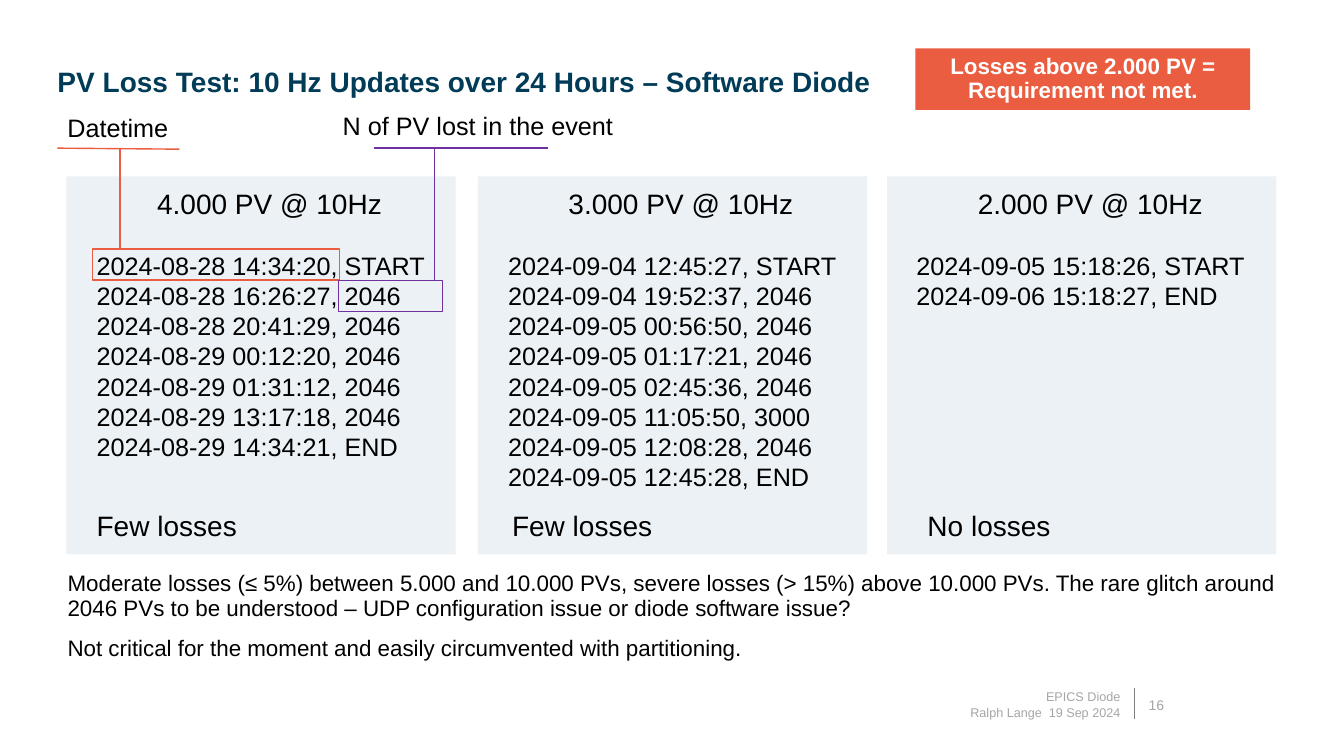
from lxml.etree import SubElement
from pptx import Presentation
from pptx.dml.color import RGBColor
from pptx.enum.shapes import MSO_CONNECTOR as Connector, MSO_SHAPE as Preset
from pptx.enum.text import MSO_ANCHOR as Anchor, MSO_AUTO_SIZE as AutoSize, PP_ALIGN as Align
from pptx.oxml.ns import qn
from pptx.util import Inches, Pt


class Theme:
    font = "Arial"
    navy = RGBColor(0x00, 0x3C, 0x58)
    panel = RGBColor(0xD9, 0xE5, 0xEC)
    orange = RGBColor(0xEB, 0x5D, 0x40)
    purple = RGBColor(0x70, 0x30, 0xA0)
    black = RGBColor(0x00, 0x00, 0x00)
    white = RGBColor(0xFF, 0xFF, 0xFF)
    footer = RGBColor(0xA6, 0xA6, 0xA6)
    divider = RGBColor(0x80, 0x80, 0x80)
    heading = 20
    log = 18
    body = 16
    number = 10
    small = 9


def write(holder, text, size=Theme.log, color=Theme.black, bold=False,
          align=Align.LEFT, anchor=Anchor.TOP, spacing=1.0, after=0):
    frame = holder.text_frame
    frame.word_wrap = True
    frame.auto_size = AutoSize.NONE
    frame.vertical_anchor = anchor
    for index, line in enumerate(text.split("\n")):
        para = frame.add_paragraph() if index else frame.paragraphs[0]
        para.alignment = align
        para.line_spacing = spacing
        para.space_before = Pt(0)
        para.space_after = Pt(after)
        span = para.add_run()
        span.text = line
        span.font.name = Theme.font
        span.font.size = Pt(size)
        span.font.bold = bold
        span.font.color.rgb = color


def add_rectangle(bounds, fill=None, line=None):
    shape = page.shapes.add_shape(Preset.RECTANGLE, *map(Inches, bounds))
    shape.shadow.inherit = False
    if fill is None:
        shape.fill.background()
    else:
        shape.fill.solid()
        shape.fill.fore_color.rgb = fill
    if line is None:
        shape.line.fill.background()
    else:
        shape.line.color.rgb = line
        shape.line.width = Pt(1)
    return shape


deck = Presentation()
deck.slide_width = Inches(13.33)
deck.slide_height = Inches(7.5)
page = deck.slides.add_slide(deck.slide_layouts[1])

title, body = page.placeholders
for holder, bounds in ((title, (0.47, 0.63, 8.33, 0.48)), (body, (0.57, 5.63, 12.27, 1.04))):
    holder.left, holder.top, holder.width, holder.height = map(Inches, bounds)

write(title, "PV Loss Test: 10 Hz Updates over 24 Hours – Software Diode",
      size=Theme.heading, color=Theme.navy, bold=True, spacing=0.9, after=12)
write(body, "Moderate losses (≤ 5%) between 5.000 and 10.000 PVs, severe losses (> 15%) "
      "above 10.000 PVs. The rare glitch around 2046 PVs to be understood – "
      "UDP configuration issue or diode software issue?\n"
      "Not critical for the moment and easily circumvented with partitioning.",
      size=Theme.body, spacing=0.9, after=12)
for para in body.text_frame.paragraphs:
    settings = para._p.get_or_add_pPr()
    settings.set("marL", "0")
    settings.set("indent", "0")
    SubElement(settings, qn("a:buNone"))

panels = [
    (0.66, "4.000 PV @ 10Hz", 1.46, 0.86, """2024-08-28 14:34:20, START
2024-08-28 16:26:27, 2046
2024-08-28 20:41:29, 2046
2024-08-29 00:12:20, 2046
2024-08-29 01:31:12, 2046
2024-08-29 13:17:18, 2046
2024-08-29 14:34:21, END""", "Few losses", 0.86),
    (4.74, "3.000 PV @ 10Hz", 5.54, 4.94, """2024-09-04 12:45:27, START
2024-09-04 19:52:37, 2046
2024-09-05 00:56:50, 2046
2024-09-05 01:17:21, 2046
2024-09-05 02:45:36, 2046
2024-09-05 11:05:50, 3000
2024-09-05 12:08:28, 2046
2024-09-05 12:45:28, END""", "Few losses", 4.98),
    (8.8, "2.000 PV @ 10Hz", 9.6, 8.99, """2024-09-05 15:18:26, START
2024-09-06 15:18:27, END""", "No losses", 9.1),
]
for left, heading, heading_left, log_left, log, verdict, verdict_left in panels:
    panel = add_rectangle((left, 1.75, 3.86, 3.75), fill=Theme.panel)
    tint = panel._element.spPr.find(qn("a:solidFill"))[0]
    SubElement(tint, qn("a:alpha"), val="50000")
    log_height = 0.1 + 0.3 * len(log.split("\n"))
    for text, size, bounds in (
        (heading, Theme.heading, (heading_left, 1.8, 2.5, 0.44)),
        (log, Theme.log, (log_left, 2.43, 3.65, log_height)),
        (verdict, Theme.heading, (verdict_left, 5, 2.75, 0.44)),
    ):
        write(page.shapes.add_textbox(*map(Inches, bounds)), text, size=size)

labels = [
    ("Datetime", (0.57, 1.07, 1.23, 0.4), {}),
    ("N of PV lost in the event", (2.72, 1.05, 4.04, 0.4), {"align": Align.CENTER}),
    ("EPICS Diode\nRalph Lange  19 Sep 2024", (8.04, 6.79, 3.17, 0.4),
     {"size": Theme.small, "color": Theme.footer, "align": Align.RIGHT}),
    ("16", (11.22, 6.86, 0.5, 0.27),
     {"size": Theme.number, "color": Theme.footer, "align": Align.CENTER}),
]
for text, bounds, style in labels:
    write(page.shapes.add_textbox(*map(Inches, bounds)), text, **style)

add_rectangle((0.92, 2.47, 2.45, 0.31), line=Theme.orange)
add_rectangle((3.36, 2.78, 1.03, 0.31), line=Theme.purple)

lines = [
    ((0.57, 1.47, 1.78, 1.48), Theme.orange, 1),
    ((1.19, 1.48, 1.19, 2.47), Theme.orange, 1),
    ((3.71, 1.47, 5.44, 1.47), Theme.purple, 1),
    ((4.31, 2.78, 4.31, 1.47), Theme.purple, 1),
    ((11.25, 6.83, 11.25, 7.13), Theme.divider, 0.5),
]
for ends, color, width in lines:
    line = page.shapes.add_connector(Connector.STRAIGHT, *map(Inches, ends))
    line.line.color.rgb = color
    line.line.width = Pt(width)
    SubElement(line._element.spPr, qn("a:effectLst"))

callout = add_rectangle((9.08, 0.48, 3.32, 0.61), fill=Theme.orange)
write(callout, "Losses above 2.000 PV = Requirement not met.", size=Theme.body,
      color=Theme.white, bold=True, align=Align.CENTER, anchor=Anchor.MIDDLE,
      spacing=0.9, after=12)

deck.save("out.pptx")
